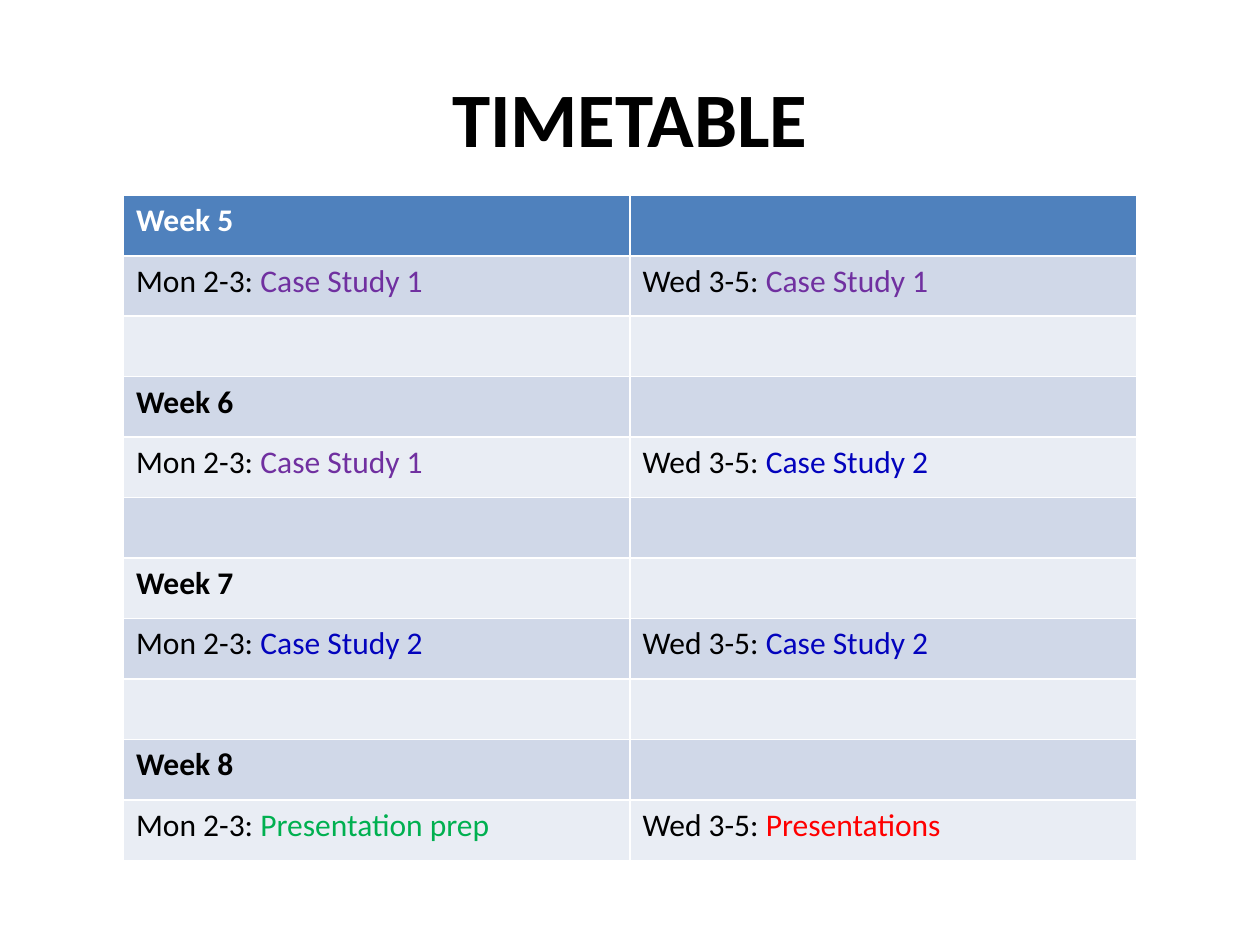
from dataclasses import dataclass

from pptx import Presentation
from pptx.dml.color import RGBColor
from pptx.enum.text import MSO_ANCHOR, PP_ALIGN
from pptx.util import Inches, Pt

FONT = "Calibri"
BLACK, WHITE = "000000", "FFFFFF"
PURPLE, BLUE, GREEN, RED = "7030A0", "0303BD", "00B050", "FF0000"
HEADER_FILL = "4F81BD"
BAND_FILLS = ("E9EDF4", "D0D8E8")
COLUMN_WIDTH, ROW_HEIGHT = 4.02, 0.48
ROWS_PER_WEEK = 3  # heading, sessions, spacer


@dataclass(frozen=True)
class Session:
    topic: str
    color: str


@dataclass(frozen=True)
class Week:
    name: str
    monday: Session
    wednesday: Session


CASE_1 = Session("Case Study 1", PURPLE)
CASE_2 = Session("Case Study 2", BLUE)
WEEKS = (
    Week("Week 5", CASE_1, CASE_1),
    Week("Week 6", CASE_1, CASE_2),
    Week("Week 7", CASE_2, CASE_2),
    Week("Week 8", Session("Presentation prep", GREEN), Session("Presentations", RED)),
)


def rgb(color: str) -> RGBColor:
    return RGBColor.from_string(color)


def style_paragraph(para, size: float, bold: bool) -> None:
    para.font.name = FONT
    para.font.size = Pt(size)
    para.font.bold = bold


def add_span(para, text: str, color: str) -> None:
    span = para.add_run()
    span.text = text
    span.font.color.rgb = rgb(color)


def add_title(page, text: str) -> None:
    box = page.shapes.add_textbox(Inches(0.5), Inches(0.3), Inches(9), Inches(1.25))
    frame = box.text_frame
    frame.word_wrap = True
    frame.vertical_anchor = MSO_ANCHOR.MIDDLE
    para = frame.paragraphs[0]
    para.alignment = PP_ALIGN.CENTER
    style_paragraph(para, 44, True)
    add_span(para, text, BLACK)


def write_cell(cell, *spans: tuple[str, str], bold: bool = False) -> None:
    para = cell.text_frame.paragraphs[0]
    style_paragraph(para, 18, bold)
    for text, color in spans:
        add_span(para, text, color)


def add_timetable(page, weeks: tuple[Week, ...]) -> None:
    row_count = ROWS_PER_WEEK * len(weeks) - 1
    table = page.shapes.add_table(
        row_count, 2, Inches(0.98), Inches(1.55),
        Inches(2 * COLUMN_WIDTH), Inches(row_count * ROW_HEIGHT),
    ).table
    for index, row in enumerate(table.rows):
        row.height = Inches(ROW_HEIGHT)
        for cell in row.cells:
            cell.fill.solid()
            cell.fill.fore_color.rgb = rgb(BAND_FILLS[index % 2] if index else HEADER_FILL)
    for number, week in enumerate(weeks):
        top = number * ROWS_PER_WEEK
        write_cell(table.cell(top, 0), (week.name, BLACK if top else WHITE), bold=True)
        sessions = (("Mon 2-3: ", week.monday), ("Wed 3-5: ", week.wednesday))
        for column, (time, session) in enumerate(sessions):
            write_cell(table.cell(top + 1, column), (time, BLACK), (session.topic, session.color))


def main() -> None:
    deck = Presentation()
    deck.slide_width, deck.slide_height = Inches(10), Inches(7.5)
    page = deck.slides.add_slide(deck.slide_layouts[6])
    add_title(page, "TIMETABLE")
    add_timetable(page, WEEKS)
    deck.save("out.pptx")


if __name__ == "__main__":
    main()
